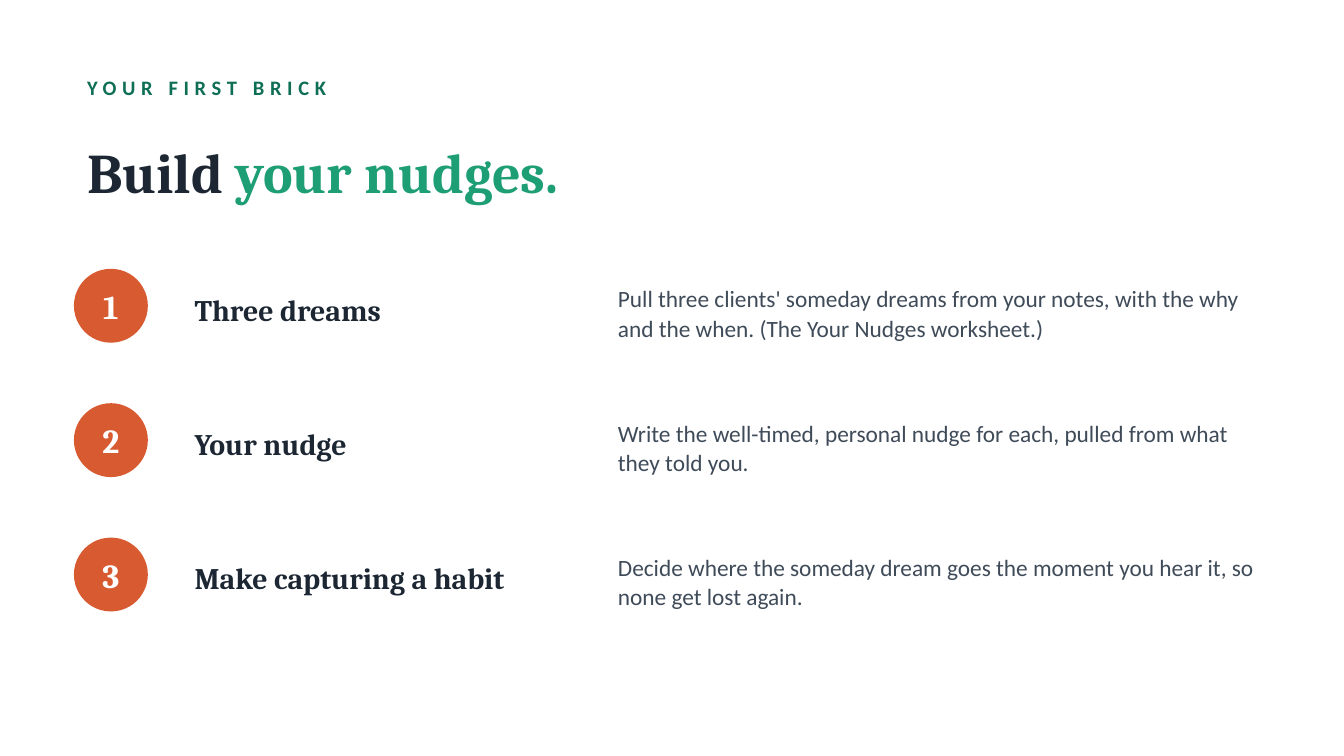
from pptx import Presentation
from pptx.dml.color import RGBColor
from pptx.enum.shapes import MSO_SHAPE
from pptx.enum.text import MSO_ANCHOR, PP_ALIGN
from pptx.util import Inches, Pt

OVAL = MSO_SHAPE.OVAL
MIDDLE = MSO_ANCHOR.MIDDLE
CENTER = PP_ALIGN.CENTER

WHITE = RGBColor(0xFF, 0xFF, 0xFF)
INK = RGBColor(0x1C, 0x27, 0x33)
SLATE = RGBColor(0x3F, 0x4B, 0x59)
PINE = RGBColor(0x0F, 0x6E, 0x56)
GREEN = RGBColor(0x1D, 0x9E, 0x75)
RUST = RGBColor(0xD8, 0x5A, 0x30)

SERIF = "Cambria"
SANS = "Calibri"

KICKER = "YOUR FIRST BRICK"
TITLE = [("Build ", INK), ("your nudges.", GREEN)]
STEPS = [
    ("Three dreams",
     "Pull three clients' someday dreams from your notes, with the why "
     "and the when. (The Your Nudges worksheet.)"),
    ("Your nudge",
     "Write the well-timed, personal nudge for each, pulled from what "
     "they told you."),
    ("Make capturing a habit",
     "Decide where the someday dream goes the moment you hear it, so "
     "none get lost again."),
]

WIDTH = 10
HEIGHT = WIDTH * 9 / 16
LEFT, TOP, PITCH, DOT = 0.55, 2, 1, 0.55


def add_text(slide, x, y, w, h, parts, font, size, bold=True):
    """Add a box with one paragraph of (text, colour) parts; return it."""
    box = slide.shapes.add_textbox(Inches(x), Inches(y), Inches(w), Inches(h))
    frame = box.text_frame
    frame.word_wrap = True
    frame.vertical_anchor = MIDDLE
    para = frame.paragraphs[0]
    for text, color in parts:
        run = para.add_run()
        run.text = text
        run.font.name = font
        run.font.size = Pt(size)
        run.font.bold = bold
        run.font.color.rgb = color
    return para


def add_dot(slide, y, label):
    dot = slide.shapes.add_shape(
        OVAL, Inches(LEFT), Inches(y), Inches(DOT), Inches(DOT))
    dot.shadow.inherit = False
    dot.fill.solid()
    dot.fill.fore_color.rgb = RUST
    dot.line.fill.background()
    para = add_text(slide, LEFT, y, DOT, DOT, [(label, WHITE)], SERIF, 18)
    para.alignment = CENTER


def main():
    deck = Presentation()
    deck.slide_width = Inches(WIDTH)
    deck.slide_height = Inches(HEIGHT)
    slide = deck.slides.add_slide(deck.slide_layouts[6])

    kicker = add_text(slide, LEFT, 0.5, 8.9, 0.3, [(KICKER, PINE)], SANS, 11)
    kicker.runs[0].font._element.set("spc", "300")
    add_text(slide, LEFT, 0.85, 8.9, 0.85, TITLE, SERIF, 30)

    for i, (name, detail) in enumerate(STEPS):
        y = TOP + i * PITCH
        add_dot(slide, y, str(i + 1))
        add_text(slide, 1.35, y - 0.05, 3, 0.7, [(name, INK)], SERIF, 16)
        body = add_text(slide, 4.5, y - 0.05, 5, 0.75,
                        [(detail, SLATE)], SANS, 12.5, False)
        body.line_spacing = 1.05

    deck.save("out.pptx")


if __name__ == "__main__":
    main()
